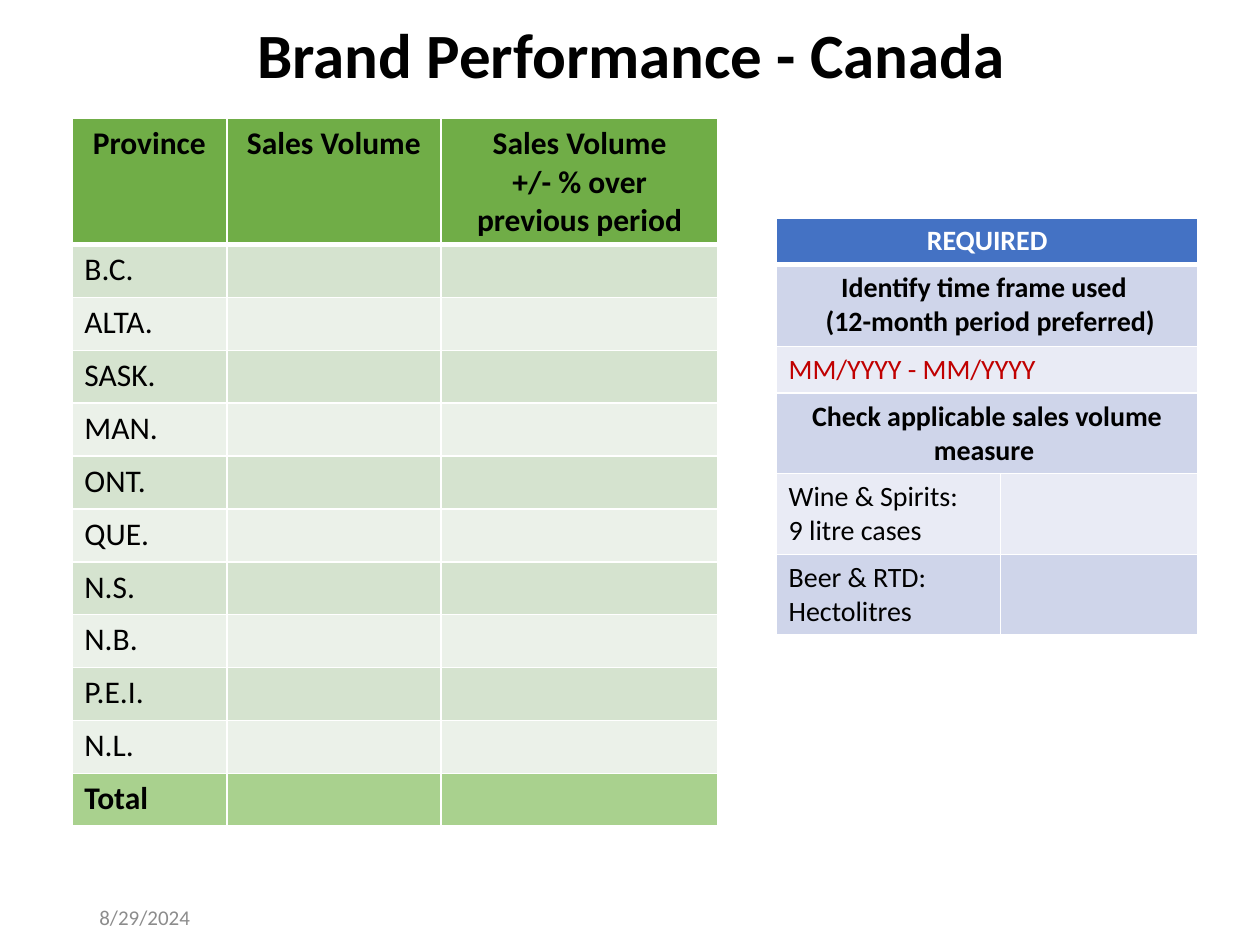
import pptx
import pptx.dml.color
import pptx.enum.text
import pptx.oxml
import pptx.oxml.ns
import pptx.util
from pptx.util import Inches

RGBColor = pptx.dml.color.RGBColor
Align = pptx.enum.text.PP_ALIGN
BLACK = RGBColor(0x00, 0x00, 0x00)
WHITE = RGBColor(0xFF, 0xFF, 0xFF)
GREY = RGBColor(0x8C, 0x8C, 0x8C)
RED = RGBColor(0xC0, 0x00, 0x00)
GREEN = RGBColor(0x70, 0xAD, 0x47)
GREEN_TOTAL = RGBColor(0xA9, 0xD1, 0x8E)
GREEN_BANDS = (RGBColor(0xD5, 0xE3, 0xCF), RGBColor(0xEB, 0xF1, 0xE9))
BLUE = RGBColor(0x44, 0x72, 0xC4)
BLUE_BANDS = (RGBColor(0xCF, 0xD5, 0xEA), RGBColor(0xE9, 0xEB, 0xF5))

PROVINCES = ("B.C.", "ALTA.", "SASK.", "MAN.", "ONT.", "QUE.", "N.S.", "N.B.", "P.E.I.", "N.L.")


def write_text(frame, lines, size, color=BLACK, bold=False, align=Align.LEFT):
    for index, line in enumerate(lines):
        para = frame.paragraphs[0] if index == 0 else frame.add_paragraph()
        para.alignment = align
        run = para.add_run()
        run.text = line
        run.font.name = "Calibri"
        run.font.size = pptx.util.Pt(size)
        run.font.bold = bold
        run.font.color.rgb = color


def add_text_box(page, left, top, width, height, text, **style):
    box = page.shapes.add_textbox(Inches(left), Inches(top), Inches(width), Inches(height))
    frame = box.text_frame
    frame.word_wrap = True
    frame.vertical_anchor = pptx.enum.text.MSO_ANCHOR.MIDDLE
    write_text(frame, [text], **style)
    return box


def add_border(cell, side, points):
    namespace = pptx.oxml.ns.nsdecls("a")
    line = pptx.oxml.parse_xml(
        f'<a:ln{side} {namespace} w="{pptx.util.Pt(points)}">'
        f'<a:solidFill><a:srgbClr val="{WHITE}"/></a:solidFill></a:ln{side}>'
    )
    cell._tc.get_or_add_tcPr().append(line)


def add_grid(page, left, top, column_widths, row_heights, row_fills):
    table = page.shapes.add_table(
        len(row_heights), len(column_widths), Inches(left), Inches(top),
        Inches(sum(column_widths)), Inches(sum(row_heights)),
    ).table
    for column, width in zip(table.columns, column_widths):
        column.width = Inches(width)
    for index, (row, height, fill) in enumerate(zip(table.rows, row_heights, row_fills)):
        row.height = Inches(height)
        for cell in row.cells:
            add_border(cell, "L", 1)
            add_border(cell, "R", 1)
            add_border(cell, "T", 3 if index == 1 else 1)
            add_border(cell, "B", 3 if index == 0 else 1)
            cell.fill.solid()
            cell.fill.fore_color.rgb = fill
    return table


def add_province_table(page):
    count = len(PROVINCES)
    fills = [GREEN, *(GREEN_BANDS[index % 2] for index in range(count)), GREEN_TOTAL]
    table = add_grid(page, 0.57, 0.94, (1.23, 1.7, 2.2), [1.0] + [0.42] * (count + 1), fills)
    headings = (["Province"], ["Sales Volume"], ["Sales Volume", "+/- % over previous period"])
    for column, lines in enumerate(headings):
        write_text(table.cell(0, column).text_frame, lines, 18, bold=True, align=Align.CENTER)
    for row, province in enumerate(PROVINCES, start=1):
        write_text(table.cell(row, 0).text_frame, [province], 18)
    write_text(table.cell(count + 1, 0).text_frame, ["Total "], 18, bold=True)


def add_required_table(page):
    heading = {"bold": True, "align": Align.CENTER}
    rows = (
        (0.37, ["REQUIRED"], {**heading, "color": WHITE}),
        (0.65, ["Identify time frame used ", " (12-month period preferred)"], heading),
        (0.37, ["MM/YYYY - MM/YYYY"], {"color": RED}),
        (0.64, ["Check applicable sales volume measure "], heading),
        (0.64, ["Wine & Spirits: ", "9 litre cases"], {}),
        (0.64, ["Beer & RTD: Hectolitres"], {}),
    )
    fills = [BLUE, *(BLUE_BANDS[index % 2] for index in range(len(rows) - 1))]
    table = add_grid(page, 6.16, 1.73, (1.78, 1.57), [row[0] for row in rows], fills)
    for index, (_, lines, style) in enumerate(rows):
        if index < 4:
            table.cell(index, 0).merge(table.cell(index, 1))
        write_text(table.cell(index, 0).text_frame, lines, 16, **style)


def main():
    deck = pptx.Presentation()
    deck.slide_width = Inches(10)
    deck.slide_height = Inches(7.5)
    page = deck.slides.add_slide(deck.slide_layouts[6])
    title = add_text_box(page, 0.51, 0.13, 9, 0.67, "Brand Performance - Canada",
                         size=36, bold=True, align=Align.CENTER)
    title.text_frame.paragraphs[0].line_spacing = 0.9
    add_text_box(page, 0.69, 7.2, 2.25, 0.15, "8/29/2024", size=12, color=GREY)
    add_province_table(page)
    add_required_table(page)
    deck.save("out.pptx")


if __name__ == "__main__":
    main()
